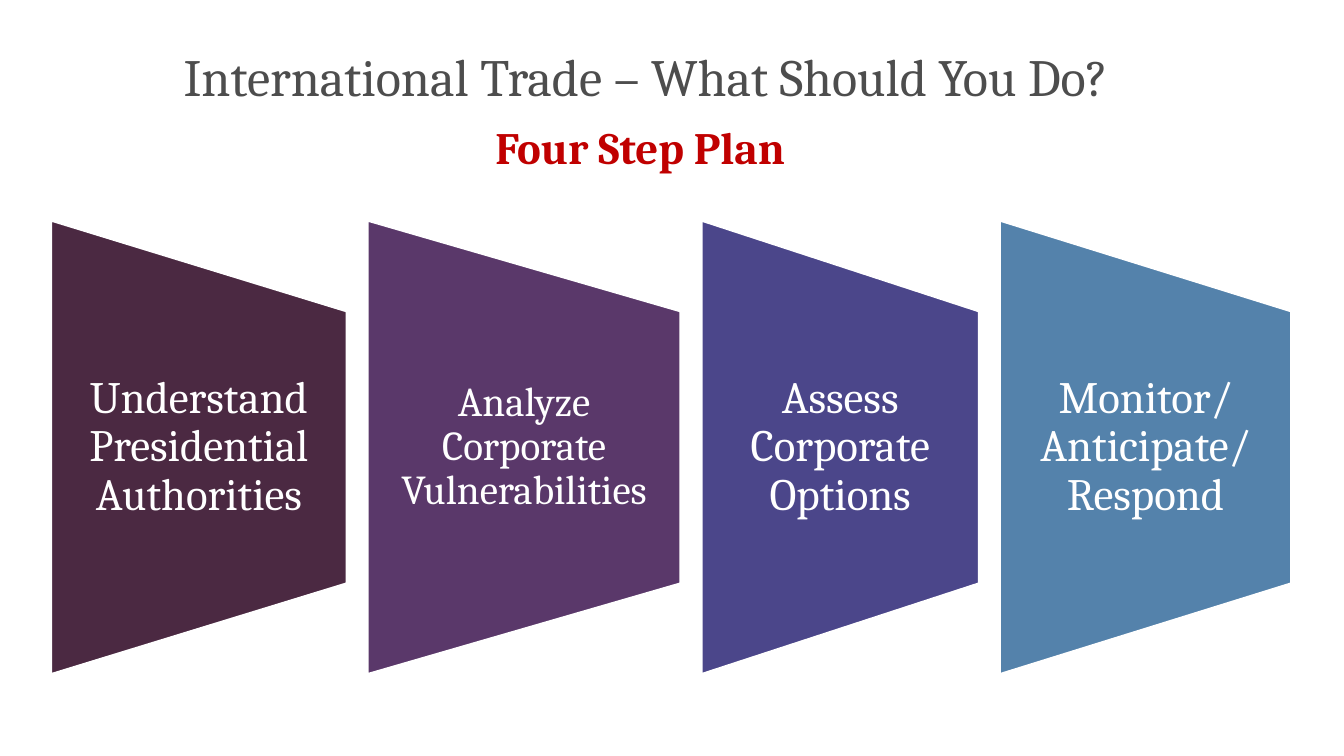
from pptx import Presentation
from pptx.dml.color import RGBColor
from pptx.enum.shapes import MSO_SHAPE as Shape
from pptx.enum.text import MSO_ANCHOR as Anchor, PP_ALIGN as Align
from pptx.util import Cm, Pt

FONT = "Cambria"
COLORS = {
    "title": "4D4D4D",
    "subtitle": "C00000",
    "white": "FFFFFF",
    "plum": "4B2942",
    "purple": "5A386A",
    "indigo": "4B468A",
    "blue": "5482AB",
}
TITLE = "International Trade – What Should You Do?"
SUBTITLE = "Four Step Plan"
STEPS = [
    ("Understand Presidential Authorities", "plum", 5.58, 24, 0.43),
    ("Analyze Corporate Vulnerabilities", "purple", 5.91, 22, 0.38),
    ("Assess Corporate Options", "indigo", 5.24, 24, 0.43),
    ("Monitor/ Anticipate/ Respond", "blue", 5.5, 24, 0.43),
]
STEPS_LEFT, STEP_GAP = 0.97, 0.4
STEP_MIDDLE, STEP_HEIGHT, LABEL_HEIGHT = 8.45, 8.56, 5.14


def color(name):
    return RGBColor.from_string(COLORS[name])


def write(box, text, size, color_name, anchor, margins, bold=False):
    frame = box.text_frame
    frame.word_wrap = True
    frame.vertical_anchor = anchor
    side, edge = margins
    frame.margin_left = frame.margin_right = Cm(side)
    frame.margin_top = frame.margin_bottom = Cm(edge)
    para = frame.paragraphs[0]
    para.text = text
    para.alignment = Align.CENTER
    para.font.name = FONT
    para.font.size = Pt(size)
    para.font.bold = bold
    para.font.color.rgb = color(color_name)
    return para


def add_step(page, left, text, fill, width, size, inset):
    panel = page.shapes.add_shape(
        Shape.FLOWCHART_MANUAL_OPERATION,
        Cm(left + (width - STEP_HEIGHT) / 2), Cm(STEP_MIDDLE - width / 2),
        Cm(STEP_HEIGHT), Cm(width))
    panel.rotation = 270
    panel.shadow.inherit = False
    panel.fill.solid()
    panel.fill.fore_color.rgb = color(fill)
    panel.line.color.rgb = color("white")
    panel.line.width = Pt(1)
    label = page.shapes.add_textbox(
        Cm(left), Cm(STEP_MIDDLE - LABEL_HEIGHT / 2), Cm(width), Cm(LABEL_HEIGHT))
    para = write(label, text, size, "white", Anchor.MIDDLE, (inset, 0))
    para.line_spacing = 0.9


def main():
    deck = Presentation()
    deck.slide_width, deck.slide_height = Cm(25.4), Cm(14.28)
    page = deck.slides.add_slide(deck.slide_layouts[5])

    title = page.shapes.title
    title.left, title.top, title.width, title.height = Cm(0.3), Cm(-0.56), Cm(23.8), Cm(2.69)
    write(title, TITLE, 28, "title", Anchor.BOTTOM, (0, 0.1))

    subtitle = page.shapes.add_textbox(Cm(7.87), Cm(2.13), Cm(8.46), Cm(1.27))
    write(subtitle, SUBTITLE, 24, "subtitle", Anchor.TOP, (0.25, 0.13), bold=True)

    left = STEPS_LEFT
    for text, fill, width, size, inset in STEPS:
        add_step(page, left, text, fill, width, size, inset)
        left += width + STEP_GAP

    deck.save("out.pptx")


if __name__ == "__main__":
    main()
